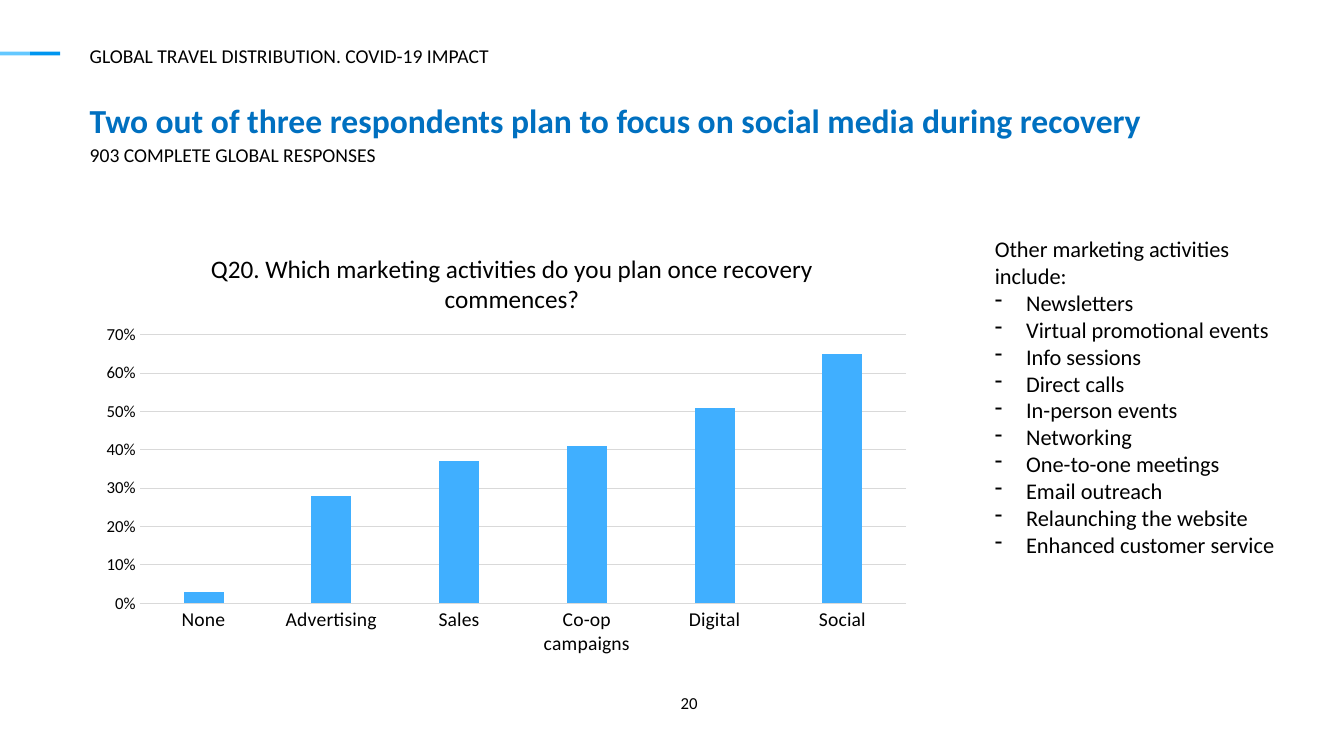
from dataclasses import dataclass

from lxml import etree
from pptx import Presentation
from pptx.chart.chart import Chart
from pptx.chart.data import CategoryChartData
from pptx.dml.color import RGBColor
from pptx.enum.chart import XL_CHART_TYPE, XL_TICK_MARK
from pptx.enum.shapes import MSO_SHAPE
from pptx.enum.text import MSO_ANCHOR, PP_ALIGN
from pptx.oxml.ns import qn
from pptx.slide import Slide
from pptx.text.text import Font
from pptx.util import Cm, Pt

COLUMN = XL_CHART_TYPE.COLUMN_CLUSTERED
NO_TICK = XL_TICK_MARK.NONE
RECTANGLE = MSO_SHAPE.RECTANGLE
TOP, MIDDLE = MSO_ANCHOR.TOP, MSO_ANCHOR.MIDDLE
LEFT, CENTER = PP_ALIGN.LEFT, PP_ALIGN.CENTER

FONT = "Calibri"
COLORS = {
    "text": "000000",
    "title": "0070C0",
    "accent_light": "64C8FF",
    "accent_dark": "0096F0",
    "column": "40AFFF",
    "grid": "D9D9D9",
}
MARGIN = 2.26
ACCENT_WIDTH = 0.76
BULLET_INDENT = 0.79
ACTIVITIES = {
    "None": 0.03,
    "Advertising": 0.28,
    "Sales": 0.37,
    "Co-op campaigns": 0.41,
    "Digital": 0.51,
    "Social": 0.65,
}
QUESTION = "Q20. Which marketing activities do you plan once recovery commences?"


@dataclass
class TextBlock:
    lines: list[str]
    left: float
    top: float
    width: float
    height: float
    size: int
    color: str = "text"
    bold: bool = False
    align: PP_ALIGN = LEFT
    anchor: MSO_ANCHOR = TOP
    inset: tuple[float, float] = (0, 0)
    line_spacing: float = 1.0
    bulleted: bool = False


TEXT_BLOCKS = [
    TextBlock(["GLOBAL TRAVEL DISTRIBUTION. COVID-19 IMPACT"],
              MARGIN, 1.12, 29.2, 0.58, 14, anchor=MIDDLE),
    TextBlock(["Two out of three respondents plan to focus on social media during recovery"],
              MARGIN, 2.64, 29.3, 1.45, 24, "title", bold=True, line_spacing=0.9),
    TextBlock(["903 COMPLETE GLOBAL RESPONSES"], MARGIN, 3.61, 29.2, 0.58, 14),
    TextBlock(["Other marketing activities include:", "Newsletters",
               "Virtual promotional events", "Info sessions", "Direct calls",
               "In-person events", "Networking", "One-to-one meetings",
               "Email outreach", "Relaunching the website",
               "Enhanced customer service"],
              24.82, 5.8, 8.28, 9.14, 16, inset=(0.25, 0.13), bulleted=True),
    TextBlock(["20"], 13.56, 17.32, 7.62, 1.02, 12, align=CENTER, inset=(0.25, 0.13)),
]


def rgb(name: str) -> RGBColor:
    return RGBColor.from_string(COLORS[name])


def style_font(font: Font, size: int, color: str = "text", bold: bool = False) -> None:
    font.name = FONT
    font.size = Pt(size)
    font.bold = bold
    font.color.rgb = rgb(color)


def add_accent(slide: Slide, left: float, color: str) -> None:
    shape = slide.shapes.add_shape(RECTANGLE, Cm(left), Cm(1.3), Cm(ACCENT_WIDTH), Cm(0.1))
    shape.shadow.inherit = False
    shape.fill.solid()
    shape.fill.fore_color.rgb = rgb(color)
    shape.line.fill.background()


def add_text(slide: Slide, block: TextBlock) -> None:
    box = slide.shapes.add_textbox(
        Cm(block.left), Cm(block.top), Cm(block.width), Cm(block.height))
    frame = box.text_frame
    frame.word_wrap = True
    frame.vertical_anchor = block.anchor
    frame.margin_left = frame.margin_right = Cm(block.inset[0])
    frame.margin_top = frame.margin_bottom = Cm(block.inset[1])
    for index, line in enumerate(block.lines):
        paragraph = frame.add_paragraph() if index else frame.paragraphs[0]
        paragraph.alignment = block.align
        paragraph.line_spacing = block.line_spacing
        if block.bulleted and index:
            properties = paragraph._p.get_or_add_pPr()
            properties.set("marL", str(Cm(BULLET_INDENT)))
            properties.set("indent", str(-Cm(BULLET_INDENT)))
            etree.SubElement(properties, qn("a:buChar")).set("char", "-")
        run = paragraph.add_run()
        run.text = line
        style_font(run.font, block.size, block.color, block.bold)


def place(parent: etree._Element, index: int, **values: str | float) -> None:
    for old_layout in parent.findall(qn("c:layout")):
        parent.remove(old_layout)
    layout = etree.Element(qn("c:layout"))
    manual = etree.SubElement(layout, qn("c:manualLayout"))
    for name, value in values.items():
        etree.SubElement(manual, qn(f"c:{name}")).set("val", str(value))
    parent.insert(index, layout)


def style_axes(chart: Chart) -> None:
    for axis, size in ((chart.category_axis, 14), (chart.value_axis, 12)):
        axis.major_tick_mark = axis.minor_tick_mark = NO_TICK
        style_font(axis.tick_labels.font, size)
    value_axis = chart.value_axis
    value_axis.minimum_scale, value_axis.maximum_scale = 0, 0.7
    value_axis.major_unit = 0.1
    value_axis.tick_labels.number_format = "0%"
    value_axis.tick_labels.number_format_is_linked = False
    value_axis.format.line.fill.background()
    for line in (chart.category_axis.format.line, value_axis.major_gridlines.format.line):
        line.color.rgb = rgb("grid")
        line.width = Pt(0.75)


def add_activity_chart(slide: Slide) -> None:
    data = CategoryChartData(number_format="0%")
    data.categories = list(ACTIVITIES)
    data.add_series("Series 1", list(ACTIVITIES.values()))
    chart = slide.shapes.add_chart(
        COLUMN, Cm(MARGIN), Cm(5.66), Cm(21), Cm(11.1), data).chart
    chart.has_legend = False
    style_font(chart.font, 10)
    chart.has_title = True
    run = chart.chart_title.text_frame.paragraphs[0].add_run()
    run.text = QUESTION
    style_font(run.font, 18)
    place(chart.chart_title._element, 1, xMode="edge", yMode="edge", x=0.14, y=0.05)
    place(chart._chartSpace.chart.plotArea, 0, layoutTarget="inner", xMode="edge",
          yMode="edge", x=0.06, y=0.25, w=0.92, h=0.61)
    style_axes(chart)
    plot = chart.plots[0]
    plot.vary_by_categories = False
    plot.gap_width, plot.overlap = 219, -27
    fill = plot.series[0].format.fill
    fill.solid()
    fill.fore_color.rgb = rgb("column")


def main() -> None:
    presentation = Presentation()
    presentation.slide_width, presentation.slide_height = Cm(33.87), Cm(19.05)
    slide = presentation.slides.add_slide(presentation.slide_layouts[6])
    for index, color in enumerate(("accent_light", "accent_dark")):
        add_accent(slide, index * ACCENT_WIDTH, color)
    for block in TEXT_BLOCKS:
        add_text(slide, block)
    add_activity_chart(slide)
    presentation.save("out.pptx")


if __name__ == "__main__":
    main()
